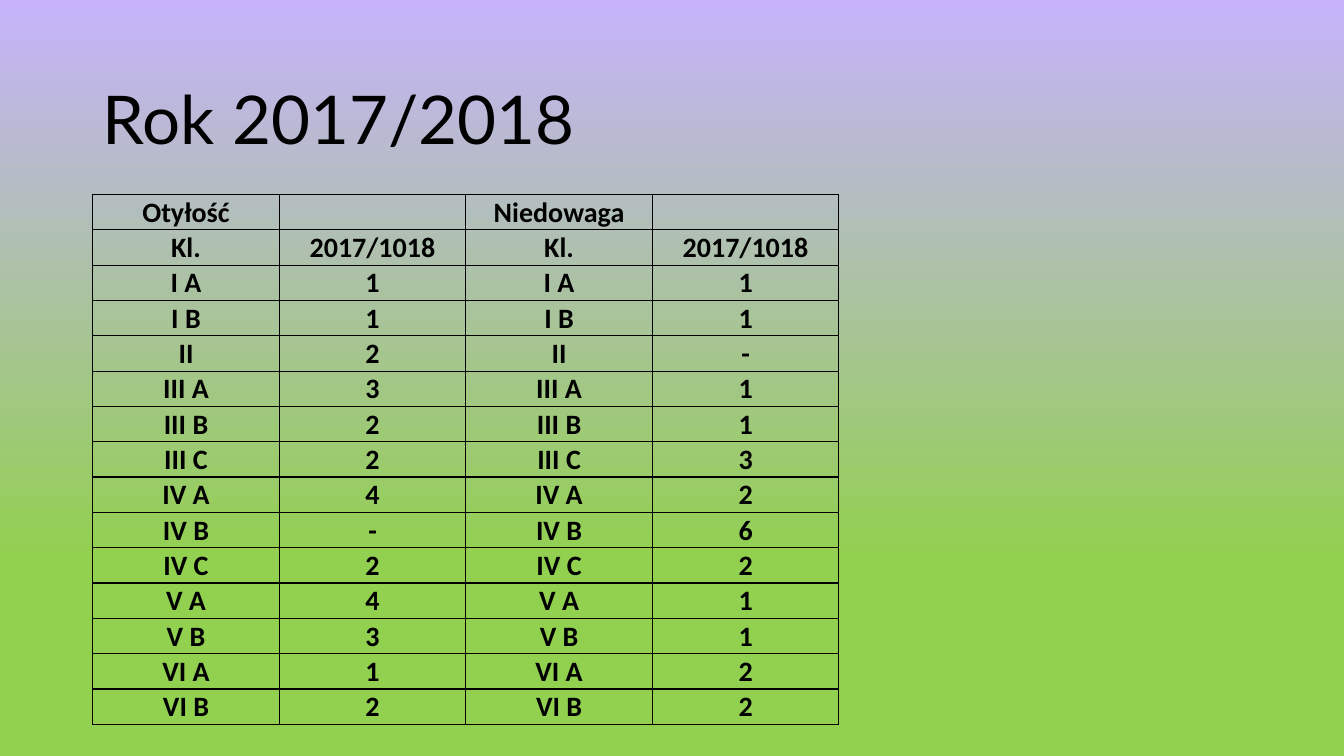
from copy import deepcopy

from lxml import etree
from pptx import Presentation
from pptx.dml.color import RGBColor
from pptx.enum.text import MSO_ANCHOR, PP_ALIGN
from pptx.oxml.ns import qn
from pptx.util import Pt

EMU_PER_PX = 9144  # 100 px to the inch
BLACK = RGBColor(0x00, 0x00, 0x00)
LILAC = RGBColor(0xC6, 0xB3, 0xFB)
GREEN = RGBColor(0x92, 0xD0, 0x50)
MIDDLE = MSO_ANCHOR.MIDDLE
LEFT, CENTER = PP_ALIGN.LEFT, PP_ALIGN.CENTER
TITLE_ONLY = 5

BACKGROUND_STOPS = [(0, LILAC), (0.74, GREEN), (0.83, GREEN), (1, GREEN)]
CLASSES = ["I A", "I B", "II", "III A", "III B", "III C", "IV A",
           "IV B", "IV C", "V A", "V B", "VI A", "VI B"]
OBESITY = ["1", "1", "2", "3", "2", "2", "4", "-", "2", "4", "3", "1", "2"]
UNDERWEIGHT = ["1", "1", "-", "1", "1", "3", "2", "6", "2", "1", "1", "2", "2"]


def px(length):
    return length * EMU_PER_PX


class SlideBuilder:
    title_font, title_size = "Lato", 48
    table_font, table_size = "Calibri", 20

    def __init__(self, slide):
        self.slide = slide

    def background(self, stops):
        """Fill the slide from top to bottom through (position, colour) stops."""
        fill = self.slide.background.fill
        fill.gradient()
        fill.gradient_angle = 270
        stop_list = fill.gradient_stops[0]._gs.getparent()
        while len(stop_list) < len(stops):
            stop_list.append(deepcopy(stop_list[-1]))
        for stop, (position, color) in zip(fill.gradient_stops, stops):
            stop.position = position
            stop.color.rgb = color

    def add_text(self, paragraph, text, font, size, align, bold=False):
        paragraph.alignment = align
        run = paragraph.add_run()
        run.text = text
        run.font.name = font
        run.font.size = Pt(size)
        run.font.bold = bold
        run.font.color.rgb = BLACK

    def title(self, text, left, top, width, height):
        title = self.slide.shapes.title
        title.left, title.top = px(left), px(top)
        title.width, title.height = px(width), px(height)
        frame = title.text_frame
        frame.word_wrap = True
        frame.vertical_anchor = MIDDLE
        paragraph = frame.paragraphs[0]
        paragraph.line_spacing = 0.9
        self.add_text(paragraph, text, self.title_font, self.title_size, LEFT)

    def border(self, cell):
        properties = cell._tc.get_or_add_tcPr()
        for side in ("lnL", "lnR", "lnT", "lnB"):
            line = etree.SubElement(properties, qn(f"a:{side}"), w=str(Pt(1)))
            solid = etree.SubElement(line, qn("a:solidFill"))
            etree.SubElement(solid, qn("a:srgbClr"), val=str(BLACK))

    def table(self, rows, left, top, column_width, row_height):
        columns = len(rows[0])
        table = self.slide.shapes.add_table(
            len(rows), columns, px(left), px(top),
            px(column_width * columns), px(row_height * len(rows))).table
        table.first_row = table.horz_banding = False
        for column in table.columns:
            column.width = px(column_width)
        for row, texts in zip(table.rows, rows):
            row.height = px(row_height)
            for cell, text in zip(row.cells, texts):
                self.cell(cell, text)

    def cell(self, cell, text):
        self.border(cell)
        cell.fill.background()
        cell.margin_left = cell.margin_right = cell.margin_top = px(1)
        cell.margin_bottom = 0
        cell.vertical_anchor = MIDDLE
        if text:
            self.add_text(cell.text_frame.paragraphs[0], text, self.table_font,
                          self.table_size, CENTER, bold=True)


def main():
    presentation = Presentation()
    presentation.slide_width, presentation.slide_height = px(1333), px(750)
    layout = presentation.slide_layouts[TITLE_ONLY]
    builder = SlideBuilder(presentation.slides.add_slide(layout))
    builder.background(BACKGROUND_STOPS)
    builder.title("Rok 2017/2018", 92, 49, 1150, 145)
    headings = [("Otyłość", "", "Niedowaga", ""),
                ("Kl.", "2017/1018", "Kl.", "2017/1018")]
    counts = list(zip(CLASSES, OBESITY, CLASSES, UNDERWEIGHT))
    builder.table(headings + counts, 92, 193, 185, 34)
    presentation.save("out.pptx")


if __name__ == "__main__":
    main()
